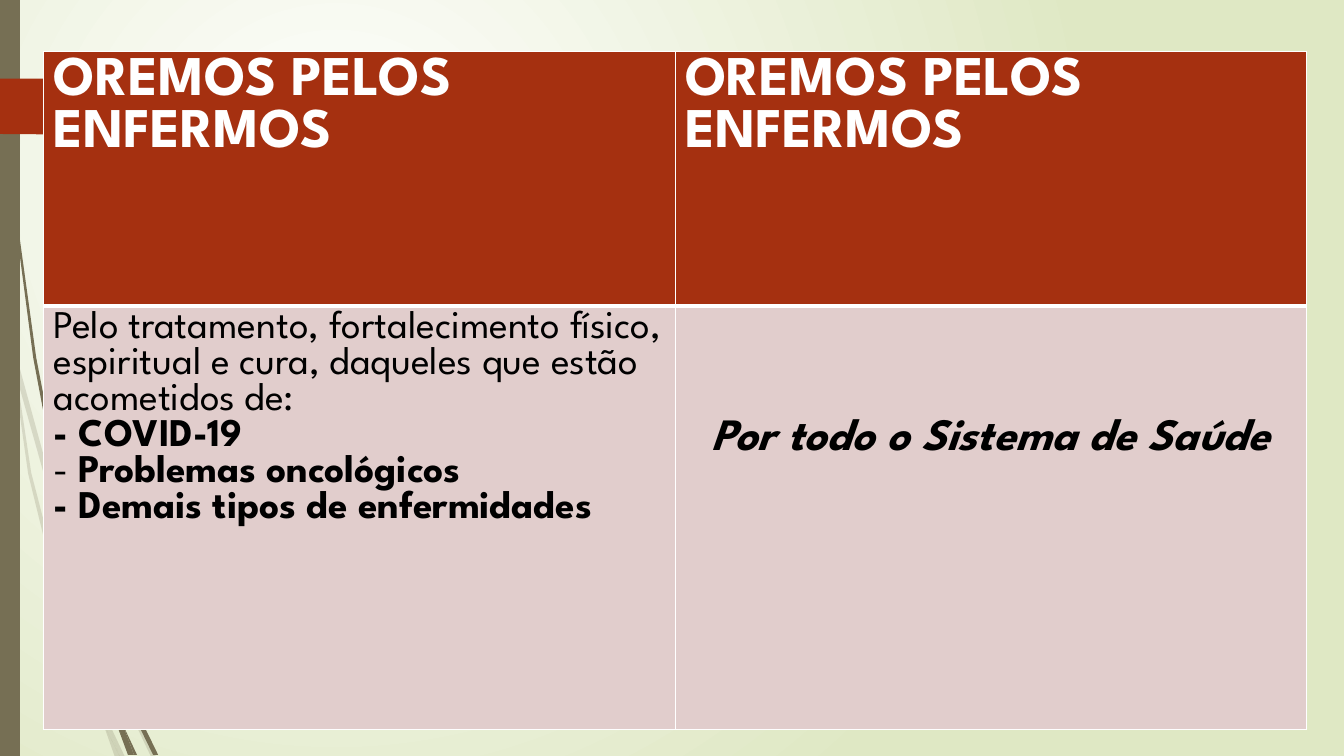
from lxml.etree import SubElement
from pptx import Presentation
from pptx.dml.color import RGBColor
from pptx.enum.shapes import MSO_SHAPE
from pptx.enum.text import PP_ALIGN
from pptx.oxml import parse_xml
from pptx.oxml.ns import nsdecls, qn
from pptx.util import Cm, Pt

FONT = "League Spartan"
OLIVE = RGBColor(0x76, 0x6F, 0x54)
RUST = RGBColor(0xA5, 0x30, 0x10)
PINK = RGBColor(0xE1, 0xCD, 0xCC)
PALE_GREEN = RGBColor(0xDF, 0xE8, 0xC4)
WHITE = RGBColor(0xFF, 0xFF, 0xFF)
BLACK = RGBColor(0, 0, 0)

# Outlines use a grid of 100 units to 2.54 cm
GRID = Cm(2.54) / 100

FAINT_WISPS = [
    [(11, 350), (9, 322), (0, 282), (0, 299), (10, 344)],
    [(58, 522), (84, 599), (85, 586), (62, 520), (14, 345), (17, 376)],
    [(92, 607), (88, 596), (88, 610), (123, 694), (150, 751), (155, 751),
     (127, 692)],
    [(119, 751), (124, 751), (105, 711)],
    [(93, 683), (70, 619), (31, 469), (17, 376), (11, 350), (28, 470),
     (65, 621), (92, 693), (101, 714), (99, 707)],
    [(84, 599), (87, 646), (93, 683), (96, 692), (105, 711), (103, 706),
     (91, 646), (88, 610), (88, 608)],
    [(88, 584), (110, 462), (160, 349), (229, 245), (268, 198), (290, 175),
     (312, 154), (312, 153), (289, 175), (268, 197), (228, 244), (158, 348),
     (107, 461), (85, 584), (85, 586), (88, 596)],
    [(101, 714), (114, 751), (119, 751)],
    [(88, 608), (88, 610), (88, 596), (85, 586), (84, 599)],
    [(96, 692), (93, 683), (99, 707), (101, 714), (119, 751), (105, 711)],
]
SOLID_WISPS = [
    [(7, 110), (17, 233), (33, 355), (56, 477), (57, 481), (55, 457),
     (55, 453), (36, 355), (19, 232), (8, 109), (5, 48), (4, 0), (3, 0),
     (4, 48)],
    [(88, 592), (106, 645), (106, 633), (106, 631), (93, 590), (60, 472),
     (64, 505)],
    [(113, 649), (110, 641), (111, 656), (132, 708), (152, 749), (157, 749),
     (136, 706)],
    [(110, 691), (98, 657), (72, 556), (64, 505), (57, 477), (68, 557),
     (93, 659), (111, 708), (117, 722), (116, 717)],
    [(60, 472), (58, 453), (54, 349), (58, 245), (63, 193), (70, 141),
     (62, 193), (56, 245), (52, 349), (55, 449)],
    [(133, 749), (136, 749), (122, 719)],
    [(57, 477), (64, 505), (60, 472), (55, 449), (55, 453)],
    [(111, 633), (125, 552), (158, 476), (205, 406), (231, 374), (245, 359),
     (261, 344), (260, 344), (245, 358), (231, 373), (204, 405), (156, 474),
     (122, 551), (106, 631), (110, 641)],
    [(117, 722), (127, 749), (131, 749)],
    [(106, 645), (110, 691), (116, 706), (122, 719), (121, 716), (111, 656),
     (109, 651)],
    [(106, 645), (109, 651), (111, 656), (110, 641), (106, 631), (106, 633)],
    [(116, 706), (110, 691), (116, 717), (117, 722), (130, 749), (133, 749),
     (122, 719)],
]
PAGE_ARROW = [(173, 108), (148, 133), (146, 134), (136, 134), (0, 133),
              (0, 78), (136, 78), (146, 78), (148, 79), (173, 104),
              (174, 106)]


def set_background(slide):
    slide.background.fill.solid()
    properties = slide.background._cSld.find(qn("p:bg")).find(qn("p:bgPr"))
    gradient = parse_xml(
        f'<a:gradFill {nsdecls("a")} rotWithShape="1"><a:gsLst>'
        f'<a:gs pos="0"><a:srgbClr val="{WHITE}"/></a:gs>'
        f'<a:gs pos="100000"><a:srgbClr val="{PALE_GREEN}"/></a:gs>'
        '</a:gsLst><a:path path="circle"><a:fillToRect l="50000" t="50000" '
        'r="100000" b="100000"/></a:path></a:gradFill>')
    properties.replace(properties.find(qn("a:solidFill")), gradient)


def paint(shape, color, opacity=100):
    shape.shadow.inherit = False
    shape.line.fill.background()
    shape.fill.solid()
    shape.fill.fore_color.rgb = color
    if opacity < 100:
        color_node = shape._element.spPr.find(qn("a:solidFill"))[0]
        SubElement(color_node, qn("a:alpha"), val=str(opacity * 1000))


def add_outline(slide, points, color, opacity=100):
    builder = slide.shapes.build_freeform(*points[0], scale=GRID)
    builder.add_line_segments(points[1:], close=True)
    paint(builder.convert_to_shape(), color, opacity)


def add_borders(cell, bottom_width):
    properties = cell._tc.get_or_add_tcPr()
    widths = {"lnL": 1, "lnR": 1, "lnT": 1, "lnB": bottom_width}
    for side, width in widths.items():
        border = SubElement(properties, qn(f"a:{side}"), w=str(Pt(width)))
        fill = SubElement(border, qn("a:solidFill"))
        SubElement(fill, qn("a:srgbClr"), val=str(WHITE))


def style_cell(cell, fill, bottom_width=1):
    add_borders(cell, bottom_width)
    cell.fill.solid()
    cell.fill.fore_color.rgb = fill


def style_font(font, size, color, bold, italic=False):
    font.name = FONT
    font.size = Pt(size)
    font.color.rgb = color
    font.bold = bold
    font.italic = italic


def write_lines(cell, lines, size, color, italic=False):
    """Each line is a list of (text, bold) pieces."""
    frame = cell.text_frame
    for index, pieces in enumerate(lines):
        paragraph = frame.add_paragraph() if index else frame.paragraphs[0]
        style_font(paragraph.font, size, color, pieces[0][1], italic)
        for text, bold in pieces:
            run = paragraph.add_run()
            run.text = text
            style_font(run.font, size, color, bold, italic)


def add_prayer_table(slide):
    prayers = slide.shapes.add_table(
        2, 2, Cm(1.1), Cm(1.3), Cm(31.83), Cm(17.08)).table
    prayers.horz_banding = False
    for column, width in zip(prayers.columns, (15.92, 15.91)):
        column.width = Cm(width)
    for row, height in zip(prayers.rows, (6.41, 10.67)):
        row.height = Cm(height)

    # Headings
    for heading in prayers.rows[0].cells:
        style_cell(heading, RUST, bottom_width=3)
        write_lines(heading, [[("OREMOS PELOS ENFERMOS", True)]], 40, WHITE)

    # Intentions
    for intention in prayers.rows[1].cells:
        style_cell(intention, PINK)
    illnesses, health_system = prayers.rows[1].cells
    write_lines(illnesses, [
        [("Pelo tratamento, fortalecimento físico, espiritual e cura, "
          "daqueles que estão acometidos de:", False)],
        [("- COVID-19", True)],
        [("- ", False), ("Problemas oncológicos", True)],
        [("- Demais tipos de enfermidades", True)],
    ], 28, BLACK)
    health_system.margin_top = Cm(2.85)
    write_lines(health_system, [[("Por todo o Sistema de Saúde", True)]],
                32, BLACK, italic=True)
    health_system.text_frame.paragraphs[0].alignment = PP_ALIGN.CENTER


def main():
    presentation = Presentation()
    presentation.slide_width = Cm(33.87)
    presentation.slide_height = Cm(19.05)
    slide = presentation.slides.add_slide(presentation.slide_layouts[6])
    set_background(slide)

    # Grass wisps, side band and page arrow
    for wisp in FAINT_WISPS:
        add_outline(slide, wisp, OLIVE, opacity=20)
    for wisp in SOLID_WISPS:
        add_outline(slide, wisp, OLIVE)
    side_band = slide.shapes.add_shape(
        MSO_SHAPE.RECTANGLE, 0, 0, Cm(0.5), presentation.slide_height)
    paint(side_band, OLIVE)
    add_outline(slide, PAGE_ARROW, RUST)

    add_prayer_table(slide)
    presentation.save("out.pptx")


if __name__ == "__main__":
    main()
